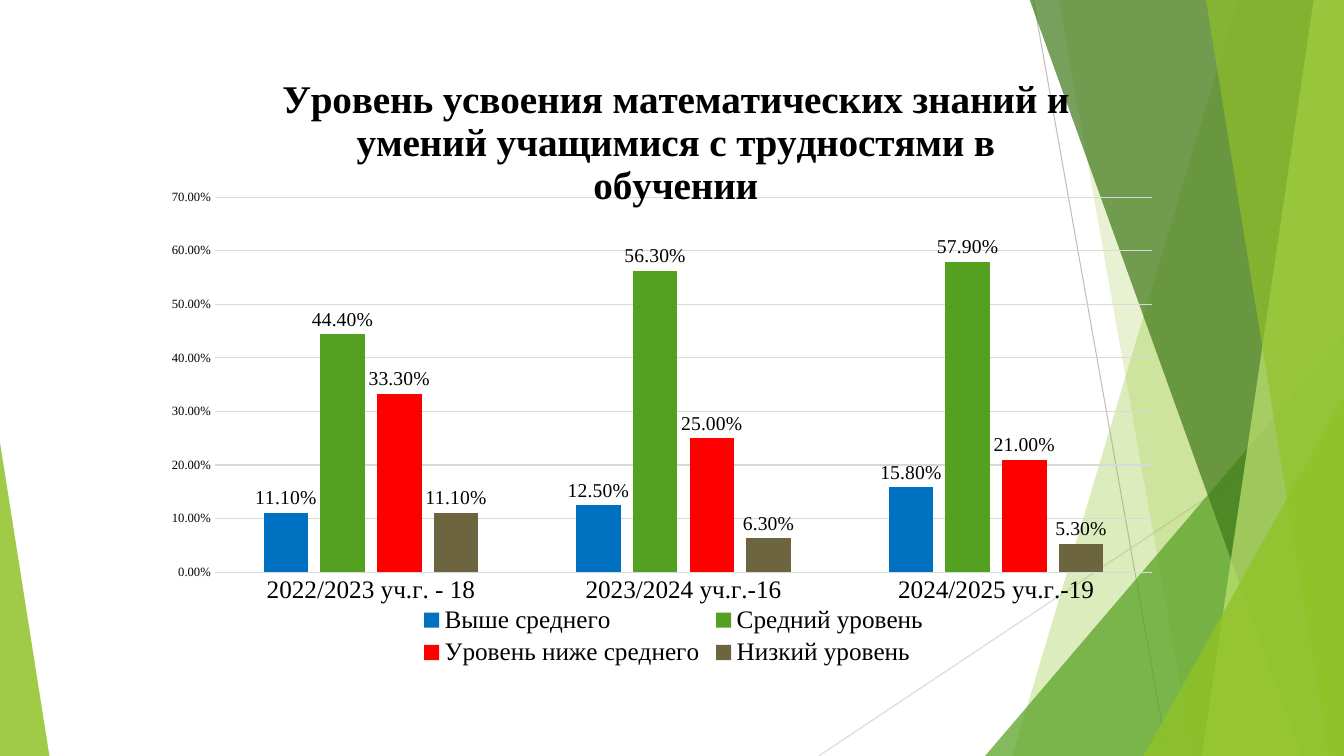
from pptx import Presentation, util as u
from pptx.chart.data import CategoryChartData
from pptx.dml.color import RGBColor
from pptx.enum import chart as ch, shapes as sh
from pptx.oxml import parse_xml
from pptx.oxml.ns import nsdecls, qn

PX = 9144  # 100 px to the inch
FACE = "Times New Roman"
GREY = "D9D9D9"
TOP, LOW, RIGHT = -1, 750, 1333

TITLE = "Уровень усвоения математических знаний и умений учащимися с трудностями в обучении"
YEARS = ["2022/2023 уч.г. - 18", "2023/2024 уч.г.-16", "2024/2025 уч.г.-19"]
LEVELS = [
    ("Выше среднего", "0070C0", [0.111, 0.125, 0.158]),
    ("Средний уровень", "54A021", [0.444, 0.563, 0.579]),
    ("Уровень ниже среднего", "FF0000", [0.333, 0.25, 0.21]),
    ("Низкий уровень", "6D6540", [0.111, 0.063, 0.053]),
]


def px(*vals):
    return [v * PX for v in vals]


def rgb(code):
    return RGBColor.from_string(code)


def put(obj, **vals):
    for key, val in vals.items():
        setattr(obj, key, val)


def paint(fill, code):
    fill.solid()
    fill.fore_color.rgb = rgb(code)


def ink(font, size, bold=False):
    put(font, name=FACE, size=u.Pt(size), bold=bold)
    font.color.rgb = rgb("000000")


def stroke(line, code):
    line.width = u.Pt(0.75)
    paint(line.fill, code)


def glaze(shape, code, alpha):
    """Flat fill with an opacity in percent, no outline."""
    shape.shadow.inherit = False
    paint(shape.fill, code)
    shape.line.fill.background()
    tint = shape.fill._xPr.find(qn("a:solidFill"))[0]
    tint.append(parse_xml(f'<a:alpha {nsdecls("a")} val="{alpha * 1000}"/>'))


def ray(slide, ends, code):
    line = slide.shapes.add_connector(sh.MSO_CONNECTOR.STRAIGHT, *px(*ends))
    stroke(line.line, code)
    line._element.spPr.append(parse_xml(f'<a:effectLst {nsdecls("a")}/>'))


def band(slide, head, foot, code, alpha):
    """Area between a slanted edge and the right side of the slide."""
    pen = slide.shapes.build_freeform(head, TOP, scale=PX)
    pen.add_line_segments([(RIGHT, TOP), (RIGHT, LOW), (foot, LOW)], close=True)
    glaze(pen.convert_to_shape(), code, alpha)


def wedge(slide, box, tip, code, alpha):
    shape = slide.shapes.add_shape(sh.MSO_SHAPE.ISOSCELES_TRIANGLE, *px(*box))
    shape.adjustments[0] = tip
    glaze(shape, code, alpha)


def place(node, index, **spots):
    """Manual layout of a chart part, as shares of the chart."""
    for old in node.findall(qn("c:layout")):
        node.remove(old)
    inner = '<c:layoutTarget val="inner"/>' if "w" in spots else ""
    modes = "".join(f'<c:{k}Mode val="edge"/>' for k in "xy")
    sizes = "".join(f'<c:{k} val="{v}"/>' for k, v in spots.items())
    node.insert(index, parse_xml(
        f'<c:layout {nsdecls("c")}><c:manualLayout>{inner}{modes}{sizes}'
        '</c:manualLayout></c:layout>'))


def graph(slide, box):
    data = CategoryChartData(number_format="0.00%")
    data.categories = YEARS
    for name, _, vals in LEVELS:
        data.add_series(name, vals)
    kind = ch.XL_CHART_TYPE.COLUMN_CLUSTERED
    chart = slide.shapes.add_chart(kind, *px(*box), data).chart
    ink(chart.font, 10)

    # Title
    head = chart.chart_title
    head.text_frame.text = TITLE
    ink(head.text_frame.paragraphs[0].runs[0].font, 28, True)
    head.include_in_layout = False
    place(head._element, 1, x=0.105, y=0.03)

    # Columns and labels
    plot = chart.plots[0]
    put(plot, gap_width=219, overlap=-27, vary_by_categories=False)
    place(plot._element.getparent(), 0, x=0.045, y=0.239, w=0.93, h=0.602)
    for row, (_, code, _) in zip(plot.series, LEVELS):
        paint(row.format.fill, code)
        tags = row.data_labels
        put(tags, show_value=True, number_format="0.00%",
            number_format_is_linked=False,
            position=ch.XL_LABEL_POSITION.OUTSIDE_END)
        ink(tags.font, 14)

    # Axes
    base, scale = chart.category_axis, chart.value_axis
    for axis, size in ((base, 18), (scale, 9)):
        put(axis, major_tick_mark=ch.XL_TICK_MARK.NONE,
            minor_tick_mark=ch.XL_TICK_MARK.NONE)
        ink(axis.tick_labels.font, size)
    stroke(base.format.line, GREY)
    scale.format.line.fill.background()
    put(scale, minimum_scale=0, maximum_scale=0.7, major_unit=0.1)
    put(scale.tick_labels, number_format="0.00%", number_format_is_linked=False)
    stroke(scale.major_gridlines.format.line, GREY)

    # Legend
    chart.has_legend = True
    put(chart.legend, position=ch.XL_LEGEND_POSITION.BOTTOM,
        include_in_layout=False)
    ink(chart.legend.font, 18)


def main():
    prs = Presentation()
    put(prs, slide_width=u.Inches(13.33), slide_height=u.Inches(7.5))
    slide = prs.slides.add_slide(prs.slide_layouts[6])

    # Green facets
    ray(slide, (1025, 0, 1158, 750), "BFBFBF")
    ray(slide, (1333, 403, 812, 750), GREY)
    band(slide, 1228, 1004, "90C226", 30)
    band(slide, 1050, 1183, "90C226", 20)
    wedge(slide, (977, 333, 356, 417), 1, "54A021", 72)
    band(slide, 1021, 1291, "3F7819", 70)
    band(slide, 1303, 1192, "C0E474", 70)
    band(slide, 1196, 1318, "90C226", 65)
    wedge(slide, (1134, 393, 199, 357), 1, "90C226", 80)
    wedge(slide, (0, 439, 49, 311), 0, "90C226", 85)

    # Results by year
    graph(slide, (168, 48, 1000, 618))
    prs.save("out.pptx")


if __name__ == "__main__":
    main()
